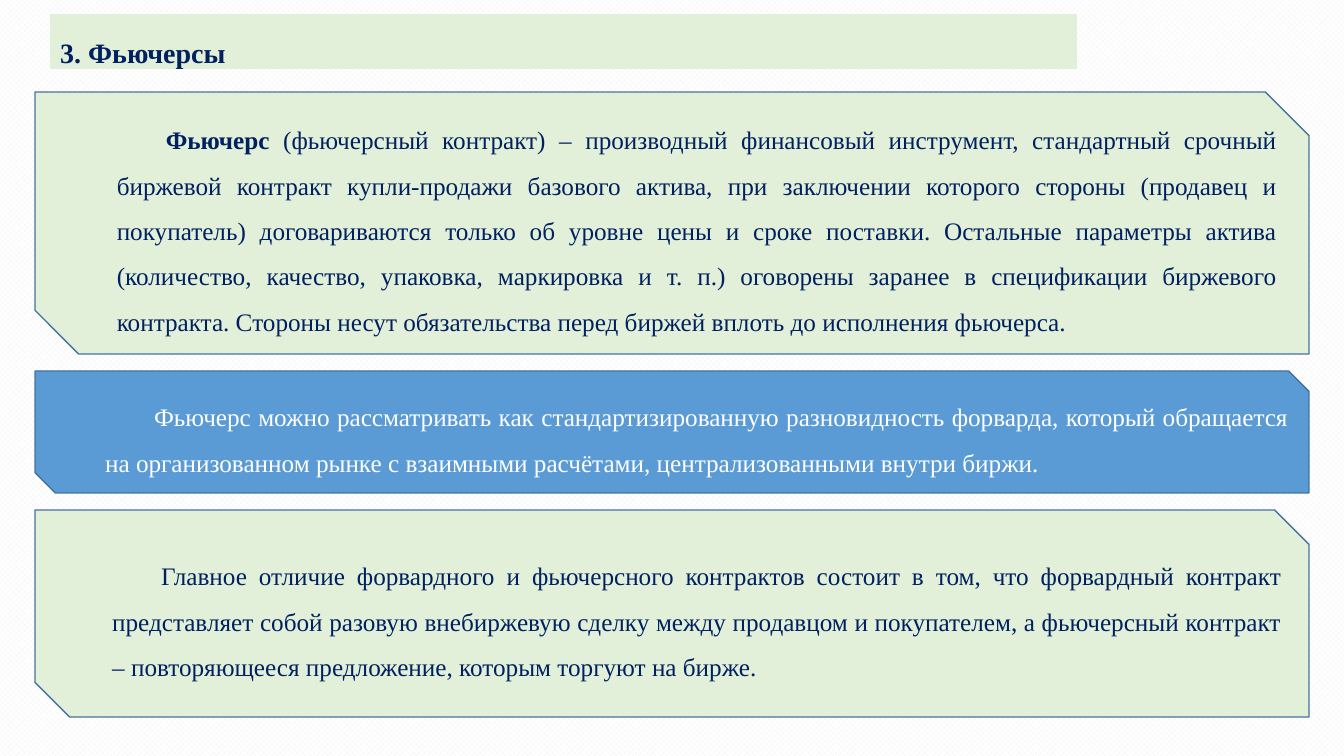
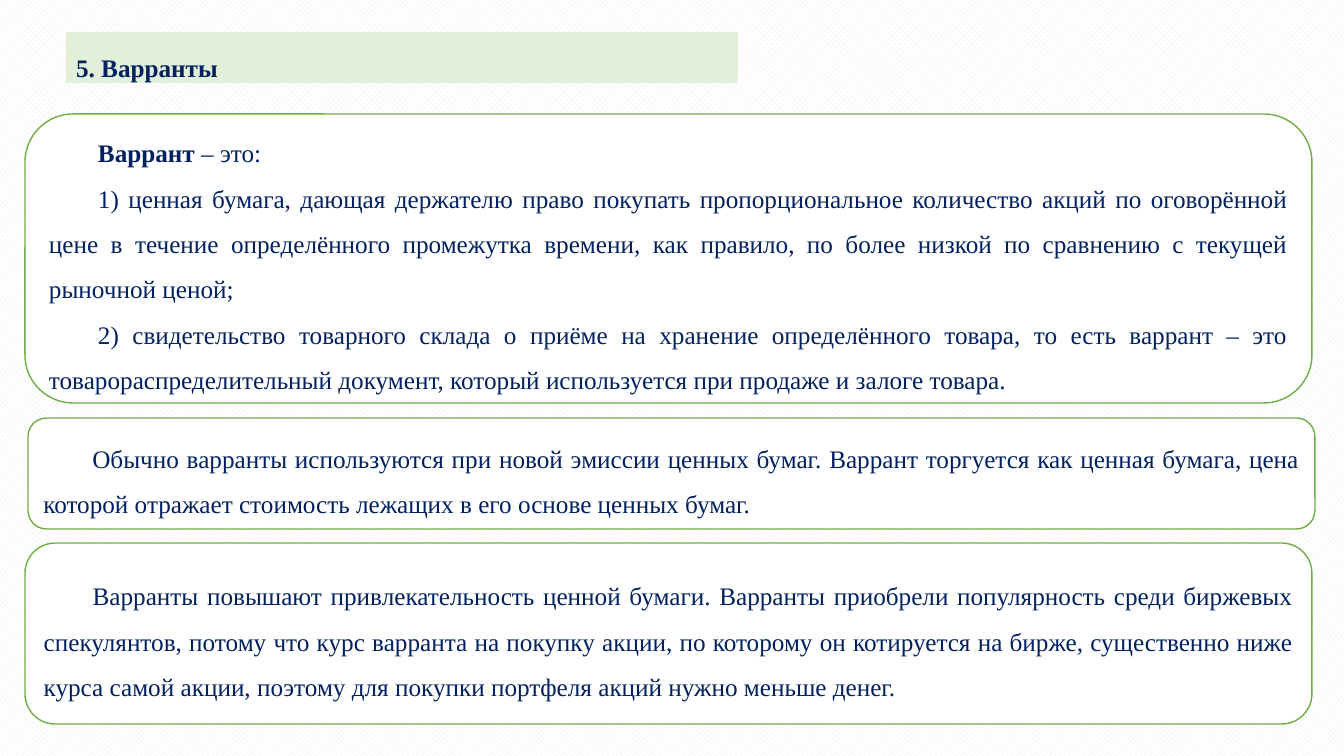
from pptx import Presentation
from pptx.dml.color import RGBColor
from pptx.enum.dml import MSO_PATTERN
from pptx.enum.shapes import MSO_SHAPE
from pptx.enum.text import MSO_ANCHOR, MSO_AUTO_SIZE, PP_ALIGN
from pptx.util import Inches, Pt

SCALE = Inches(7.5) / 756
FONT = "Times New Roman"
NAVY, WHITE, PALE_GREEN = "002060", "FFFFFF", "E2F0D9"
BLUE, DARK_BLUE, GREEN = "5B9BD5", "43739E", "70AD47"
FIRST_LINE = 49


def px(length):
    return round(length * SCALE)


def color(hex_string):
    return RGBColor.from_string(hex_string)


presentation = Presentation()
presentation.slide_width, presentation.slide_height = px(1344), px(756)

background = presentation.slide_master.background.fill
background.patterned()
background.pattern = MSO_PATTERN.OUTLINED_DIAMOND
background.fore_color.rgb = color("F2F2F2")
background.back_color.rgb = color(WHITE)

# Each panel: box in px, fill, text colour, paragraphs as (bold lead, text)
slides = [
    {
        "title": "3. Фьючерсы", "title_box": (50, 14, 1027, 55), "title_size": 20,
        "outline": MSO_SHAPE.SNIP_2_DIAG_RECTANGLE, "line": DARK_BLUE,
        "indent": 50, "space_after": 8,
        "panels": [
            ((35, 92, 1274, 262), PALE_GREEN, NAVY, [
                ("Фьючерс", " (фьючерсный контракт) – производный финансовый инструмент, "
                 "стандартный срочный биржевой контракт купли-продажи базового актива, при "
                 "заключении которого стороны (продавец и покупатель) договариваются только "
                 "об уровне цены и сроке поставки. Остальные параметры актива (количество, "
                 "качество, упаковка, маркировка и т. п.) оговорены заранее в спецификации "
                 "биржевого контракта. Стороны несут обязательства перед биржей вплоть до "
                 "исполнения фьючерса."),
            ]),
            ((35, 371, 1274, 122), BLUE, WHITE, [
                ("", "Фьючерс можно рассматривать как стандартизированную разновидность "
                 "форварда, который обращается на организованном рынке с взаимными "
                 "расчётами, централизованными внутри биржи."),
            ]),
            ((35, 510, 1274, 207), PALE_GREEN, NAVY, [
                ("", "Главное отличие форвардного и фьючерсного контрактов состоит в том, "
                 "что форвардный контракт представляет собой разовую внебиржевую сделку "
                 "между продавцом и покупателем, а фьючерсный контракт – повторяющееся "
                 "предложение, которым торгуют на бирже."),
            ]),
        ],
    },
    {
        "title": "5. Варранты", "title_box": (66, 32, 672, 51), "title_size": 18,
        "outline": MSO_SHAPE.ROUNDED_RECTANGLE, "line": GREEN,
        "indent": 0, "space_after": 0,
        "panels": [
            ((25, 114, 1287, 289), WHITE, NAVY, [
                ("Варрант", " – это:"),
                ("", "1) ценная бумага, дающая держателю право покупать пропорциональное "
                 "количество акций по оговорённой цене в течение определённого промежутка "
                 "времени, как правило, по более низкой по сравнению с текущей рыночной "
                 "ценой;"),
                ("", "2) свидетельство товарного склада о приёме на хранение определённого "
                 "товара, то есть варрант – это товарораспределительный документ, который "
                 "используется при продаже и залоге товара."),
            ]),
            ((28, 418, 1287, 111), WHITE, NAVY, [
                ("", "Обычно варранты используются при новой эмиссии ценных бумаг. Варрант "
                 "торгуется как ценная бумага, цена которой отражает стоимость лежащих в "
                 "его основе ценных бумаг."),
            ]),
            ((25, 543, 1287, 181), WHITE, NAVY, [
                ("", "Варранты повышают привлекательность ценной бумаги. Варранты приобрели "
                 "популярность среди биржевых спекулянтов, потому что курс варранта на "
                 "покупку акции, по которому он котируется на бирже, существенно ниже курса "
                 "самой акции, поэтому для покупки портфеля акций нужно меньше денег."),
            ]),
        ],
    },
]

for content in slides:
    slide = presentation.slides.add_slide(presentation.slide_layouts[5])

    title = slide.shapes.title
    title.left, title.top, title.width, title.height = map(px, content["title_box"])
    title.fill.solid()
    title.fill.fore_color.rgb = color(PALE_GREEN)
    title.text_frame.auto_size = MSO_AUTO_SIZE.NONE
    title.text_frame.vertical_anchor = MSO_ANCHOR.TOP
    title.text_frame.text = content["title"]
    paragraph = title.text_frame.paragraphs[0]
    paragraph.alignment = PP_ALIGN.JUSTIFY
    paragraph.line_spacing = 1.5
    paragraph.space_after = Pt(8)
    paragraph.font.name = FONT
    paragraph.font.size = Pt(content["title_size"])
    paragraph.font.bold = True
    paragraph.font.color.rgb = color(NAVY)

    for box, fill, text_color, paragraphs in content["panels"]:
        panel = slide.shapes.add_shape(content["outline"], *map(px, box))
        panel.shadow.inherit = False
        panel.fill.solid()
        panel.fill.fore_color.rgb = color(fill)
        panel.line.color.rgb = color(content["line"])
        panel.line.width = Pt(1)
        text_frame = panel.text_frame
        text_frame.word_wrap = True
        text_frame.vertical_anchor = MSO_ANCHOR.MIDDLE
        for index, (lead, text) in enumerate(paragraphs):
            paragraph = text_frame.add_paragraph() if index else text_frame.paragraphs[0]
            properties = paragraph._p.get_or_add_pPr()
            properties.set("marL", str(px(content["indent"])))
            properties.set("indent", str(px(FIRST_LINE)))
            paragraph.alignment = PP_ALIGN.JUSTIFY
            paragraph.line_spacing = 1.5
            paragraph.space_after = Pt(content["space_after"])
            paragraph.font.name = FONT
            paragraph.font.size = Pt(18)
            paragraph.font.color.rgb = color(text_color)
            if lead:
                run = paragraph.add_run()
                run.text = lead
                run.font.bold = True
            paragraph.add_run().text = text

presentation.save("out.pptx")
